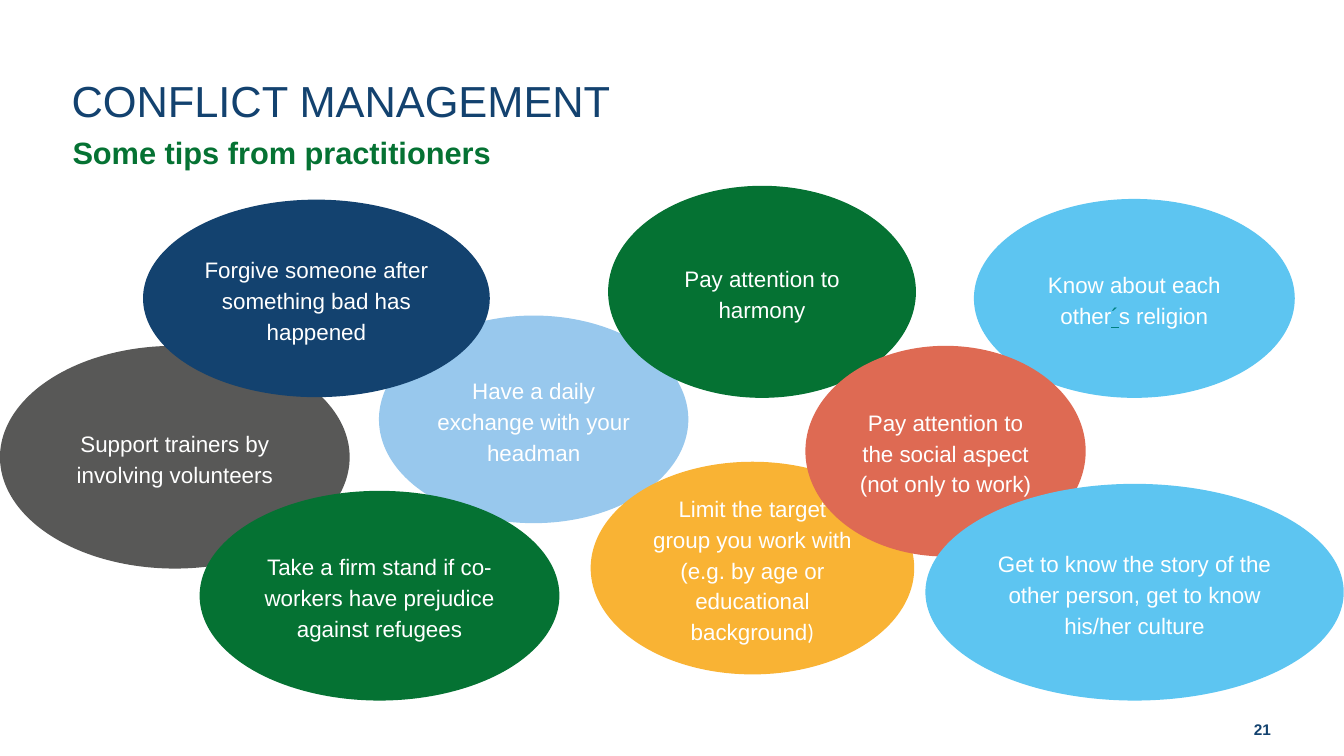
from pptx import Presentation
from pptx.dml.color import RGBColor
from pptx.enum.shapes import MSO_SHAPE
from pptx.enum.text import MSO_ANCHOR, PP_ALIGN
from pptx.util import Pt

ELLIPSE = MSO_SHAPE.OVAL
TOP, MIDDLE, BOTTOM = MSO_ANCHOR.TOP, MSO_ANCHOR.MIDDLE, MSO_ANCHOR.BOTTOM
LEFT, CENTER, RIGHT = PP_ALIGN.LEFT, PP_ALIGN.CENTER, PP_ALIGN.RIGHT

NAVY = RGBColor(0x13, 0x42, 0x6F)
GREEN = RGBColor(0x05, 0x72, 0x33)
PALE_BLUE = RGBColor(0x98, 0xC8, 0xED)
SKY = RGBColor(0x5D, 0xC5, 0xF1)
AMBER = RGBColor(0xF9, 0xB3, 0x34)
GREY = RGBColor(0x58, 0x58, 0x57)
CORAL = RGBColor(0xDE, 0x6A, 0x53)
TEAL = RGBColor(0x00, 0x80, 0x80)
WHITE = RGBColor(0xFF, 0xFF, 0xFF)

# Headings: text, box, margins, anchor, alignment, line pitch, size, colour, bold
HEADINGS = [
    ("21", (743, 496.1, 216, 43.2), (0, 3.6, 51.1, 11.5), BOTTOM, RIGHT, 13.3, 11, NAVY, True),
    ("CONFLICT MANAGEMENT", (51.1, 52.6, 777.6, 80.6), (0, 3.6, 7.2, 3.6),
     TOP, LEFT, 34, 31, NAVY, False),
    ("Some tips from practitioners", (51.8, 93.6, 821.5, 33.8), (0, 3.6, 7.2, 3.6),
     TOP, LEFT, 25, 22, GREEN, True),
]

# Tips from back to front: text runs, box, fill, outlined
TIPS = [
    (["Have a daily exchange with your headman"], (270.7, 225.4, 221, 148.3), PALE_BLUE, False),
    (["Pay attention to harmony"], (434.9, 133.2, 218.9, 150.5), GREEN, True),
    (["Know about each other", "´", "s religion"], (696.2, 142.6, 228.2, 141.1), SKY, True),
    (["Limit the target group you work with (e.g. by age or educational background", ")"],
     (421.9, 329.8, 231.1, 151.9), AMBER, False),
    (["Support trainers by involving volunteers"], (0, 247, 249.8, 159.1), GREY, False),
    (["Pay attention to the social aspect (not only to work)"],
     (575.3, 247, 200.2, 150.5), CORAL, False),
    (["Take a firm stand if co-workers have prejudice against refugees"],
     (142.6, 350.6, 257, 149.8), GREEN, False),
    (["Forgive someone after something bad has happened"],
     (102.2, 142.6, 247.7, 141.1), NAVY, False),
    (["Get to know the story of the other person, get to know his/her culture"],
     (661, 345.6, 298.8, 154.8), SKY, False),
]


def points(values):
    return [Pt(value) for value in values]


def write(frame, runs, anchor, align, spacing, size, color, bold=False):
    frame.word_wrap = True
    frame.vertical_anchor = anchor
    paragraph = frame.paragraphs[0]
    paragraph.alignment = align
    paragraph.line_spacing = spacing
    font = paragraph.font
    font.name, font.size, font.bold = "Arial", Pt(size), bold
    font.color.rgb = color
    for text in runs:
        run = paragraph.add_run()
        run.text = text
        if text == "´":
            run.font.underline = True
            run.font.color.rgb = TEAL
        elif text == ")":
            run.font.name = "Calibri"
    return paragraph


deck = Presentation()
deck.slide_width, deck.slide_height = Pt(960), Pt(540)
slide = deck.slides.add_slide(deck.slide_layouts[6])

# Page number, title and subtitle
for text, box, margins, anchor, align, pitch, size, color, bold in HEADINGS:
    frame = slide.shapes.add_textbox(*points(box)).text_frame
    (frame.margin_left, frame.margin_top,
     frame.margin_right, frame.margin_bottom) = points(margins)
    write(frame, [text], anchor, align, Pt(pitch), size, color, bold)

# Overlapping ellipses
for runs, box, fill, outlined in TIPS:
    tip = slide.shapes.add_shape(ELLIPSE, *points(box))
    tip.shadow.inherit = False
    tip.fill.solid()
    tip.fill.fore_color.rgb = fill
    if outlined:
        tip.line.color.rgb = fill
        tip.line.width = Pt(1)
    else:
        tip.line.fill.background()
    paragraph = write(tip.text_frame, runs, MIDDLE, CENTER, 1.15, 16, WHITE)
    paragraph.space_after = Pt(10)

deck.save("out.pptx")
